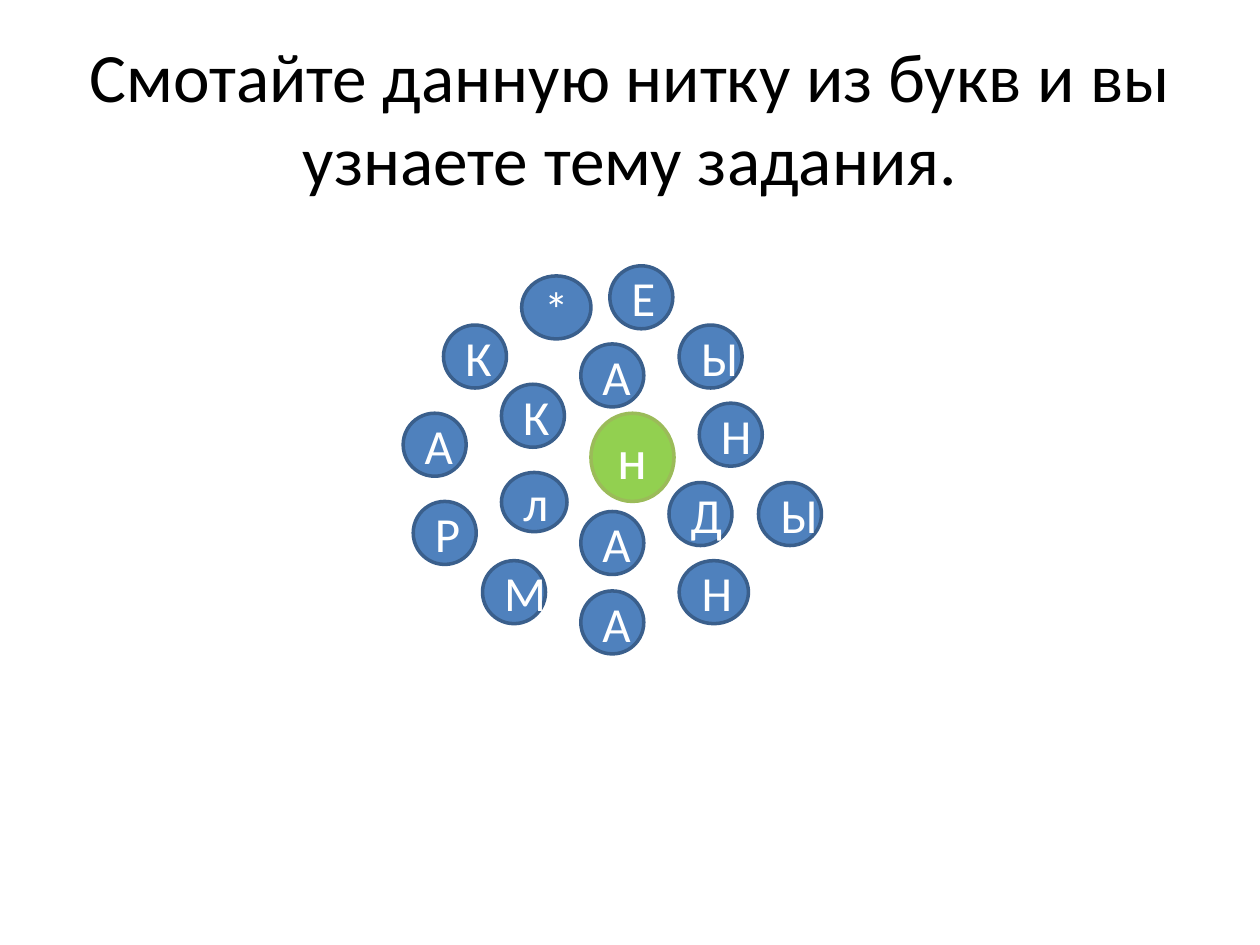
from dataclasses import dataclass

from pptx import Presentation
from pptx.dml.color import RGBColor
from pptx.enum.shapes import MSO_SHAPE
from pptx.enum.text import MSO_ANCHOR, MSO_AUTO_SIZE, PP_ALIGN
from pptx.util import Emu, Pt

SCALE = 9144  # EMU in one px, 100 px to the inch


@dataclass(frozen=True)
class Theme:
    font: str = "Calibri"
    ink: str = "000000"
    white: str = "FFFFFF"
    blue: str = "4F81BD"
    navy: str = "3A5F8C"
    lime: str = "92D050"
    olive: str = "9BBB59"
    head: float = 39.6
    large: int = 32
    small: int = 28
    edge: int = 2


class Deck:
    def __init__(self, theme, wide, high):
        self.theme = theme
        self.show = Presentation()
        self.show.slide_width = Emu(wide * SCALE)
        self.show.slide_height = Emu(high * SCALE)
        self.slide = self.show.slides.add_slide(self.show.slide_layouts[5])

    def label(self, shape, text, size, color):
        frame = shape.text_frame
        frame.word_wrap = True
        frame.auto_size = MSO_AUTO_SIZE.NONE
        frame.vertical_anchor = MSO_ANCHOR.MIDDLE
        line = frame.paragraphs[0]
        line.alignment = PP_ALIGN.CENTER
        run = line.add_run()
        run.text = text
        run.font.name = self.theme.font
        run.font.size = Pt(size)
        run.font.color.rgb = RGBColor.from_string(color)

    def title(self, text, *box):
        shape = self.slide.shapes.title
        shape.left, shape.top, shape.width, shape.height = (
            Emu(n * SCALE) for n in box)
        self.label(shape, text, self.theme.head, self.theme.ink)

    def ball(self, text, box, fill, edge, size):
        shape = self.slide.shapes.add_shape(
            MSO_SHAPE.FLOWCHART_CONNECTOR, *(Emu(n * SCALE) for n in box))
        shape.shadow.inherit = False
        shape.fill.solid()
        shape.fill.fore_color.rgb = RGBColor.from_string(fill)
        shape.line.color.rgb = RGBColor.from_string(edge)
        shape.line.width = Pt(self.theme.edge)
        self.label(shape, text, size, self.theme.white)


# Letters along the thread: text, left, top and, if not 50 by 50, the size
THREAD = [
    ("А", 461, 273), ("К", 398, 305), ("л", 398, 375, 52, 47),
    ("А", 461, 406), ("Д", 531, 383), ("Н", 555, 320),
    ("Ы", 539, 258), ("Е", 484, 211), ("*", 414, 219, 55, 50),
    ("К", 352, 258), ("А", 320, 328), ("Р", 328, 398),
    ("М", 383, 445), ("А", 461, 469), ("Н", 539, 445, 55, 50),
    ("Ы", 602, 383),
]


def main():
    theme = Theme()
    deck = Deck(theme, 1000, 750)

    # Title
    deck.title("Смотайте данную нитку из букв и вы узнаете тему задания.",
               50, 30, 900, 125)

    # Start of the thread
    deck.ball("н", (469, 328, 66, 70), theme.lime, theme.olive, theme.large)

    # Rest of the thread
    for text, left, top, *size in THREAD:
        deck.ball(text, (left, top, *(size or (50, 50))),
                  theme.blue, theme.navy, theme.small)

    deck.show.save("out.pptx")


if __name__ == "__main__":
    main()
